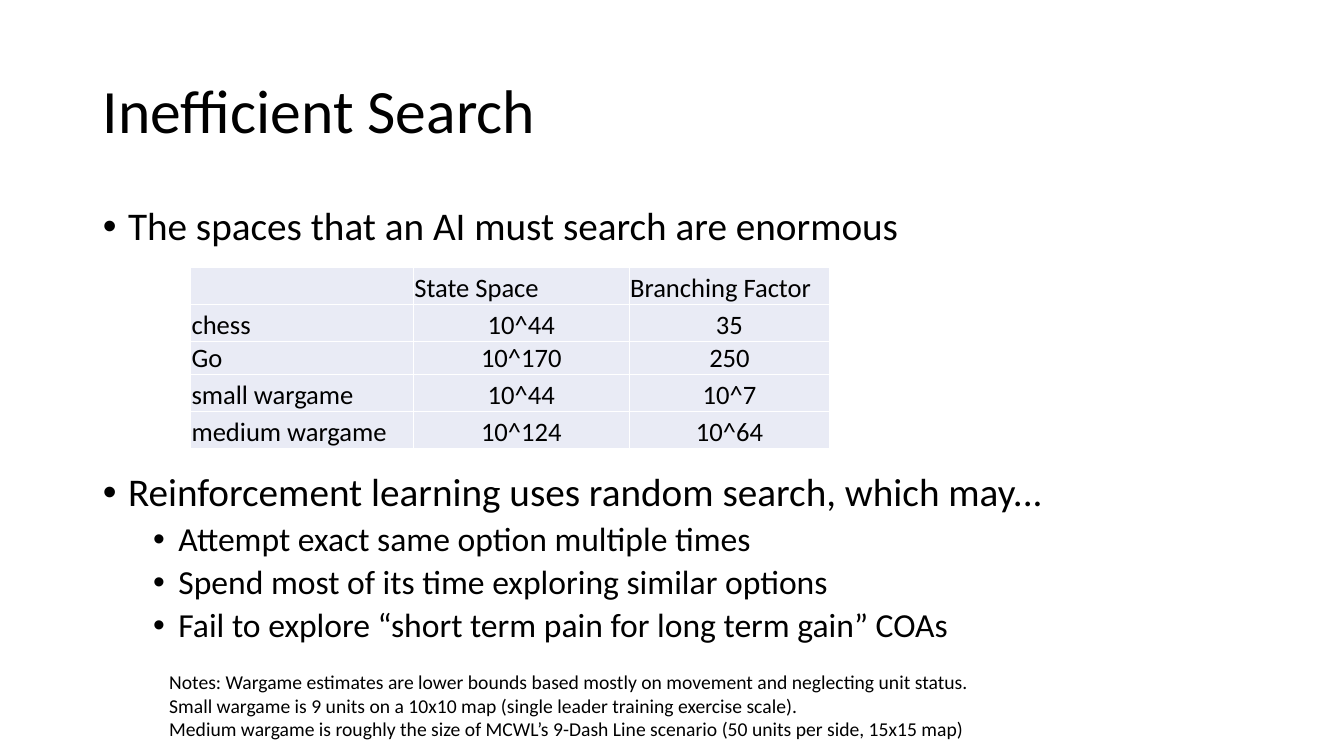
from lxml import etree
from pptx import Presentation
from pptx.dml.color import RGBColor
from pptx.enum.text import MSO_ANCHOR, MSO_AUTO_SIZE, PP_ALIGN
from pptx.oxml.ns import qn
from pptx.util import Inches, Pt

LEFT, CENTER = PP_ALIGN.LEFT, PP_ALIGN.CENTER
TOP, MIDDLE, BOTTOM = MSO_ANCHOR.TOP, MSO_ANCHOR.MIDDLE, MSO_ANCHOR.BOTTOM
NO_FIT = MSO_AUTO_SIZE.NONE

FONT = "Calibri"
BLACK, WHITE, PALE = "000000", "FFFFFF", "E9EBF5"
WIDTH, HEIGHT = Inches(13.33), Inches(7.5)
COL, ROW = WIDTH / 100, HEIGHT / 100

BULLETS = [
    (0, 10, "The spaces that an AI must search are enormous"),
    (0, 160, "Reinforcement learning uses random search, which may..."),
    (1, 5, "Attempt exact same option multiple times"),
    (1, 5, "Spend most of its time exploring similar options"),
    (1, 5, "Fail to explore “short term pain for long term gain” COAs"),
]
SPACES = [
    ("", "State Space", "Branching Factor"),
    ("chess", "10^44", "35"),
    ("Go", "10^170", "250"),
    ("small wargame", "10^44", "10^7"),
    ("medium wargame", "10^124", "10^64"),
]
COL_WEIGHTS = (221, 214, 199)
ROW_WEIGHTS = (37, 37, 33, 37, 37)
NOTES = (
    "Notes: Wargame estimates are lower bounds based mostly on movement and neglecting unit status.\n"
    "Small wargame is 9 units on a 10x10 map (single leader training exercise scale).\n"
    "Medium wargame is roughly the size of MCWL’s 9-Dash Line scenario (50 units per side, 15x15 map)"
)


def color(value):
    return RGBColor.from_string(value)


def grid_box(left, top, width, height):
    return int(left * COL), int(top * ROW), int(width * COL), int(height * ROW)


def place(sp, box):
    sp.left, sp.top, sp.width, sp.height = box


def write(p, text, size, align=LEFT):
    p.text = text
    p.alignment = align
    for r in p.runs:
        r.font.name = FONT
        r.font.size = Pt(size)
        r.font.color.rgb = color(BLACK)


def add_bullet(p, level):
    p.level = level
    pPr = p._p.get_or_add_pPr()
    pPr.set("marL", str(Inches(0.25 + 0.5 * level)))
    pPr.set("indent", str(Inches(-0.25)))
    etree.SubElement(pPr, qn("a:buFont"), typeface="Arial")
    etree.SubElement(pPr, qn("a:buChar"), char="•")


def add_borders(cell):
    tcPr = cell._tc.get_or_add_tcPr()
    for i, side in enumerate(("lnL", "lnR", "lnT", "lnB")):
        ln = etree.Element(qn(f"a:{side}"), w=str(Pt(1)))
        fill = etree.SubElement(ln, qn("a:solidFill"))
        etree.SubElement(fill, qn("a:srgbClr"), val=WHITE)
        tcPr.insert(i, ln)


def build_title(slide, box):
    sp = slide.shapes.title
    place(sp, box)
    tf = sp.text_frame
    tf.auto_size = NO_FIT
    tf.vertical_anchor = MIDDLE
    p = tf.paragraphs[0]
    write(p, "Inefficient Search", 44)
    p.line_spacing = 0.9


def build_body(slide, box):
    sp = slide.placeholders[1]
    place(sp, box)
    tf = sp.text_frame
    tf.auto_size = NO_FIT
    tf.vertical_anchor = TOP
    for i, (level, gap, text) in enumerate(BULLETS):
        p = tf.add_paragraph() if i else tf.paragraphs[0]
        write(p, text, 28 - 4 * level)
        p.line_spacing = 0.9
        p.space_before = Pt(gap)
        add_bullet(p, level)


def build_table(slide, box):
    table = slide.shapes.add_table(len(SPACES), len(COL_WEIGHTS), *box).table
    table.first_row = table.horz_banding = False
    for column, weight in zip(table.columns, COL_WEIGHTS):
        column.width = int(box[2] * weight / sum(COL_WEIGHTS))
    for row, weight in zip(table.rows, ROW_WEIGHTS):
        row.height = int(box[3] * weight / sum(ROW_WEIGHTS))
    for i, values in enumerate(SPACES):
        for j, text in enumerate(values):
            cell = table.cell(i, j)
            cell.fill.solid()
            cell.fill.fore_color.rgb = color(PALE)
            cell.vertical_anchor = BOTTOM
            cell.margin_left = cell.margin_right = cell.margin_top = Inches(0.01)
            cell.margin_bottom = 0
            write(cell.text_frame.paragraphs[0], text, 19, CENTER if i and j else LEFT)
            add_borders(cell)


def build_notes(slide, box):
    tf = slide.shapes.add_textbox(*box).text_frame
    tf.word_wrap = False
    write(tf.paragraphs[0], NOTES, 14)


def main():
    prs = Presentation()
    prs.slide_width, prs.slide_height = WIDTH, HEIGHT
    slide = prs.slides.add_slide(prs.slide_layouts[1])
    build_title(slide, grid_box(6.9, 5.33, 86.25, 19.33))
    build_body(slide, grid_box(6.9, 26.67, 86.25, 63.47))
    build_table(slide, grid_box(14.18, 35.33, 47.56, 24))
    build_notes(slide, grid_box(11.85, 88, 61.59, 10.8))
    prs.save("out.pptx")


if __name__ == "__main__":
    main()
